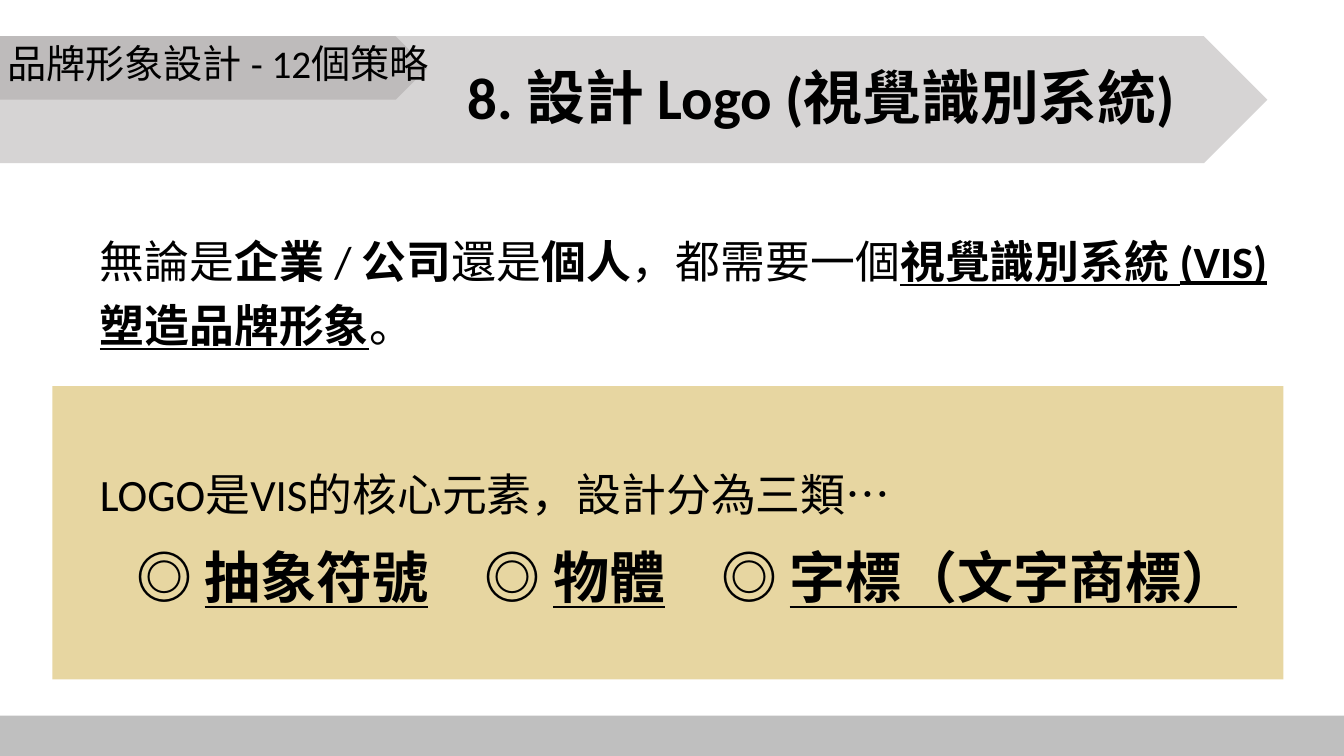
from lxml import etree
from pptx import Presentation
from pptx.dml.color import RGBColor
from pptx.enum.shapes import MSO_SHAPE as Shape
from pptx.enum.text import MSO_ANCHOR as Anchor, MSO_AUTO_SIZE as AutoSize, PP_ALIGN as Align
from pptx.oxml.ns import qn
from pptx.util import Inches, Pt

LATIN = "Calibri"
SYMBOL = "Noto Sans CJK TC"
WIDTH, HEIGHT = 13.33, 7.5
PANEL_LEFT, PANEL_WIDTH = 0.52, 12.21
PANEL_INSET = 0.47
LINE_PITCH = Pt(46)


def color(hex_code):
    return RGBColor.from_string(hex_code)


def add_block(slide, kind, left, top, width, height, fill, opacity=100):
    block = slide.shapes.add_shape(
        kind, Inches(left), Inches(top), Inches(width), Inches(height))
    block.shadow.inherit = False
    block.line.fill.background()
    block.fill.solid()
    block.fill.fore_color.rgb = color(fill)
    if opacity < 100:
        tint = block.fill._xPr.find(qn("a:solidFill"))[0]
        etree.SubElement(tint, qn("a:alpha"), val=str(opacity * 1000))
    return block


def add_text_area(slide, left, top, width, height):
    return slide.shapes.add_textbox(
        Inches(left), Inches(top), Inches(width), Inches(height))


def prepare_frame(holder, left_inset=0.1):
    frame = holder.text_frame
    frame.word_wrap = True
    frame.auto_size = AutoSize.NONE
    frame.vertical_anchor = Anchor.MIDDLE
    frame.margin_left, frame.margin_right = Inches(left_inset), Inches(0.1)
    frame.margin_top = frame.margin_bottom = Inches(0.05)
    return frame


def write(paragraph, pieces, size, align=Align.LEFT, spacing=None):
    paragraph.alignment = align
    paragraph.line_spacing = spacing
    for words, bold, underline, font_name in pieces:
        run = paragraph.add_run()
        run.text = words
        run.font.name = font_name
        run.font.size = Pt(size)
        run.font.bold = bold
        run.font.underline = underline
        run.font.color.rgb = color("000000")


def plain(words):
    return words, False, False, LATIN


def strong(words):
    return words, True, False, LATIN


def key_term(words):
    return words, True, True, LATIN


def category_pieces(categories):
    pieces = []
    for category in categories:
        if pieces:
            pieces.append(strong("　"))
        pieces += [("◎ ", True, False, SYMBOL), key_term(category)]
    return pieces


def add_series_title(slide):
    title = slide.shapes.title
    title.left, title.top = Inches(-0.03), Inches(0.38)
    title.width, title.height = Inches(4.49), Inches(0.54)
    title._element.getparent().append(title._element)
    write(prepare_frame(title).paragraphs[0],
          [plain("品牌形象設計 - 12個策略")], 28, spacing=0.9)


def add_heading(slide):
    heading = add_text_area(slide, 4.54, 0.68, 8.19, 0.54)
    write(prepare_frame(heading).paragraphs[0],
          [strong("8. 設計 Logo (視覺識別系統)")], 42)


def add_statement(slide):
    statement = add_text_area(slide, PANEL_LEFT, 2.1, PANEL_WIDTH, 1.5)
    write(prepare_frame(statement, PANEL_INSET).paragraphs[0], [
        plain("無論是"), strong("企業 "), plain("/ "), strong("公司"),
        plain("還是"), strong("個人"), plain("，都需要一個"),
        key_term("視覺識別系統 (VIS) 塑造品牌形象"), plain("。"),
    ], 32, spacing=LINE_PITCH)


def add_category_panel(slide):
    panel = add_block(slide, Shape.RECTANGLE, PANEL_LEFT, 3.83,
                      PANEL_WIDTH, 2.91, "BF9000", 37)
    frame = prepare_frame(panel, PANEL_INSET)
    intro = frame.paragraphs[0]
    write(intro, [plain("LOGO是VIS的核心元素，設計分為三類…")], 32,
          spacing=LINE_PITCH)
    intro.space_after = Pt(18)
    write(frame.add_paragraph(),
          category_pieces(["抽象符號", "物體", "字標（文字商標）"]),
          40, Align.CENTER, LINE_PITCH)


def main():
    deck = Presentation()
    deck.slide_width, deck.slide_height = Inches(WIDTH), Inches(HEIGHT)
    slide = deck.slides.add_slide(deck.slide_layouts[5])
    add_block(slide, Shape.RECTANGLE, 0, 7.1, WIDTH, 0.4, "BFBFBF")
    add_block(slide, Shape.PENTAGON, 0, 0.36, 12.57, 1.26, "AFABAB", 50)
    add_block(slide, Shape.PENTAGON, 0, 0.36, 4.24, 0.63, "AFABAB", 60)
    add_series_title(slide)
    add_statement(slide)
    add_heading(slide)
    add_category_panel(slide)
    deck.save("out.pptx")


if __name__ == "__main__":
    main()
